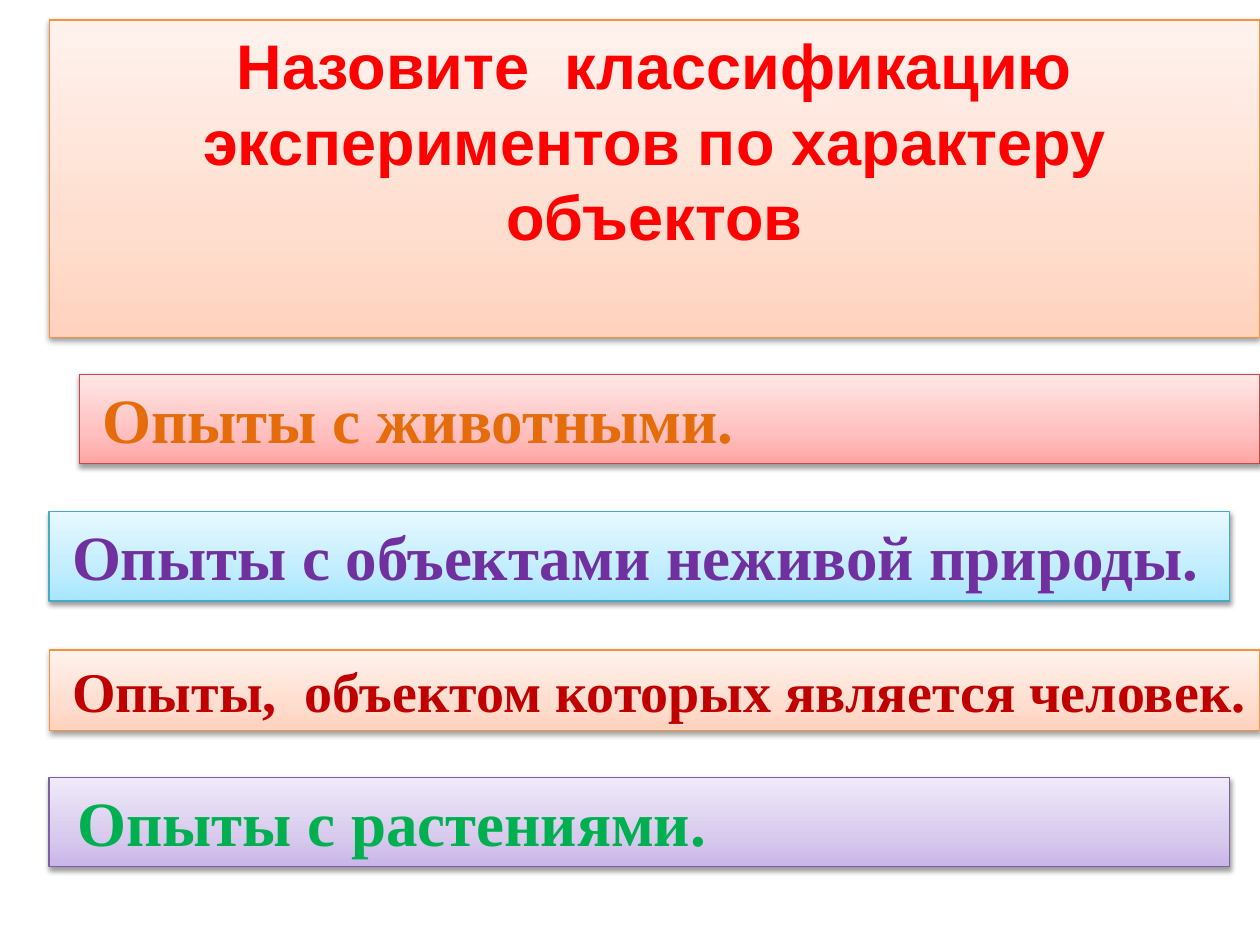
"""Build a quiz slide on the classification of experiments by their objects."""
from copy import deepcopy
from dataclasses import dataclass

from lxml import etree
from pptx import Presentation
from pptx.dml.color import RGBColor
from pptx.enum.shapes import MSO_SHAPE
from pptx.enum.text import MSO_ANCHOR, MSO_AUTO_SIZE, PP_ALIGN
from pptx.oxml.ns import qn
from pptx.presentation import Presentation as Deck
from pptx.shapes.autoshape import Shape
from pptx.slide import Slide
from pptx.util import Inches, Pt

RECTANGLE = MSO_SHAPE.RECTANGLE
TOP = MSO_ANCHOR.TOP
NO_FIT = MSO_AUTO_SIZE.NONE
LEFT, CENTER, JUSTIFY = PP_ALIGN.LEFT, PP_ALIGN.CENTER, PP_ALIGN.JUSTIFY
TITLE_ONLY = 5


@dataclass(frozen=True)
class Tint:
    """Outline colour and gradient colours from bottom to top."""
    line: str
    stops: tuple[str, str, str]


@dataclass(frozen=True)
class Theme:
    """Colours, fonts and sizes of the slide."""
    orange: Tint = Tint("F69240", ("FFD2BD", "FFDED0", "FFF2ED"))
    red: Tint = Tint("BF4C48", ("FFA6A5", "FFC0BF", "FFE7E7"))
    blue: Tint = Tint("46AAC5", ("A7E6FF", "C1EDFF", "E7F8FF"))
    purple: Tint = Tint("7D60A0", ("C9B5E8", "D8CBEE", "F0EAF9"))
    positions: tuple[float, float, float] = (0, 0.35, 1)
    title_color: str = "FF0000"
    animals: str = "E46C0A"
    lifeless: str = "7030A0"
    human: str = "C00000"
    plants: str = "00B050"
    shadow: str = "000000"
    title_font: str = "Arial"
    answer_font: str = "Times New Roman"
    large: int = 36
    medium: int = 32
    small: int = 24
    line_width: float = 0.75


THEME = Theme()


@dataclass(frozen=True)
class Span:
    """A bold run of text."""
    text: str
    size: int
    color: str
    font: str = THEME.answer_font


@dataclass(frozen=True)
class Panel:
    """A tinted rectangle holding one paragraph."""
    left: float
    top: float
    width: float
    height: float
    tint: Tint
    align: PP_ALIGN
    spans: tuple[Span, ...]


def answer(left: float, top: float, width: float, height: float, tint: Tint,
           align: PP_ALIGN, text: str, size: int, color: str,
           lead: int = THEME.small) -> Panel:
    """Describe an answer bar whose text follows a leading space."""
    spans = (Span(" ", lead, THEME.title_color), Span(text, size, color))
    return Panel(left, top, width, height, tint, align, spans)


TITLE = Panel(0.39, 0.16, 9.61, 2.52, THEME.orange, CENTER, (
    Span("Назовите  классификацию экспериментов по характеру объектов",
         THEME.large, THEME.title_color, THEME.title_font),))

ANSWERS = (
    answer(0.63, 2.97, 9.37, 0.71, THEME.red, JUSTIFY,
           "Опыты с животными.", THEME.large, THEME.animals),
    answer(0.39, 4.06, 9.37, 0.71, THEME.blue, JUSTIFY,
           "Опыты с объектами неживой природы.", THEME.large, THEME.lifeless),
    answer(0.39, 5.16, 9.61, 0.64, THEME.orange, LEFT,
           "Опыты,  объектом которых является человек.", THEME.medium, THEME.human),
    answer(0.39, 6.17, 9.37, 0.71, THEME.purple, LEFT,
           "Опыты с растениями.", THEME.large, THEME.plants, THEME.large),
)


def paint(box: Shape, tint: Tint) -> None:
    """Give a box its gradient and outline."""
    box.fill.gradient()
    stop_list = box.element.spPr.find(".//" + qn("a:gsLst"))
    stop_list.append(deepcopy(stop_list[0]))
    for stop, position, color in zip(box.fill.gradient_stops, THEME.positions, tint.stops):
        stop.position = position
        stop.color.rgb = RGBColor.from_string(color)
    box.fill.gradient_angle = 90
    box.line.color.rgb = RGBColor.from_string(tint.line)
    box.line.width = Pt(THEME.line_width)


def cast_shadow(box: Shape) -> None:
    """Add a soft shadow falling straight down."""
    box.shadow.inherit = False
    effects = box.element.spPr.find(qn("a:effectLst"))
    shadow = etree.SubElement(effects, qn("a:outerShdw"), blurRad=str(Pt(3.1)),
                              dist=str(Pt(1.6)), dir="5400000", rotWithShape="0")
    color = etree.SubElement(shadow, qn("a:srgbClr"), val=THEME.shadow)
    etree.SubElement(color, qn("a:alpha"), val="38000")


def write(box: Shape, panel: Panel) -> None:
    """Write the panel's runs into its box."""
    frame = box.text_frame
    frame.word_wrap = True
    frame.auto_size = NO_FIT
    frame.vertical_anchor = TOP
    para = frame.paragraphs[0]
    para.alignment = panel.align
    for span in panel.spans:
        run = para.add_run()
        run.text = span.text
        run.font.name = span.font
        run.font.size = Pt(span.size)
        run.font.bold = True
        run.font.color.rgb = RGBColor.from_string(span.color)


def draw_panel(box: Shape, panel: Panel) -> None:
    """Place, paint and fill in a panel."""
    box.left, box.top = Inches(panel.left), Inches(panel.top)
    box.width, box.height = Inches(panel.width), Inches(panel.height)
    paint(box, panel.tint)
    cast_shadow(box)
    write(box, panel)


def add_answer(page: Slide, panel: Panel) -> None:
    """Add one answer bar to the page."""
    box = page.shapes.add_shape(RECTANGLE, 0, 0, 0, 0)
    draw_panel(box, panel)


def main() -> None:
    """Build and save the deck."""
    deck: Deck = Presentation()
    deck.slide_width, deck.slide_height = Inches(10), Inches(7.5)
    page = deck.slides.add_slide(deck.slide_layouts[TITLE_ONLY])
    draw_panel(page.shapes.title, TITLE)
    for panel in ANSWERS:
        add_answer(page, panel)
    deck.save("out.pptx")


if __name__ == "__main__":
    main()
